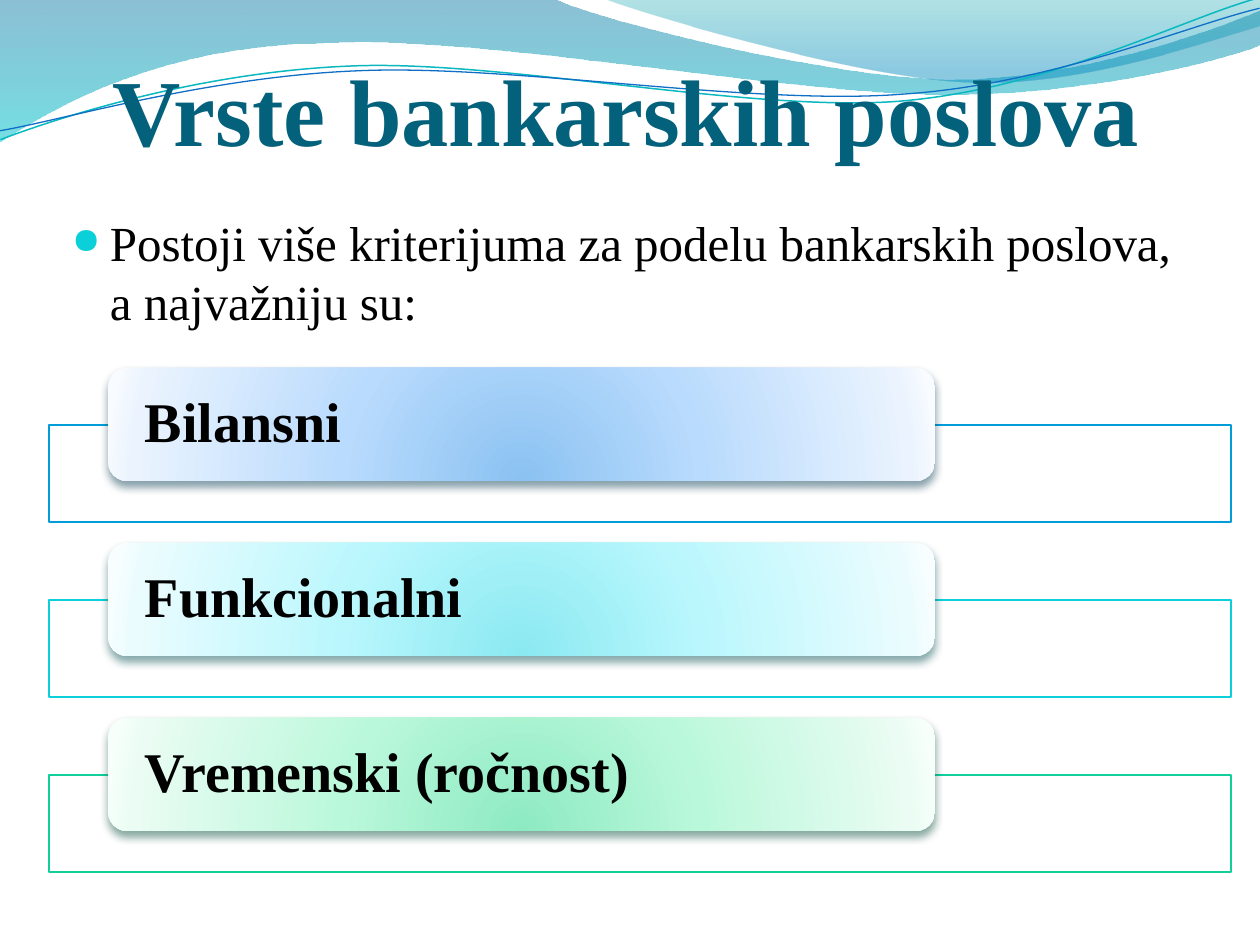
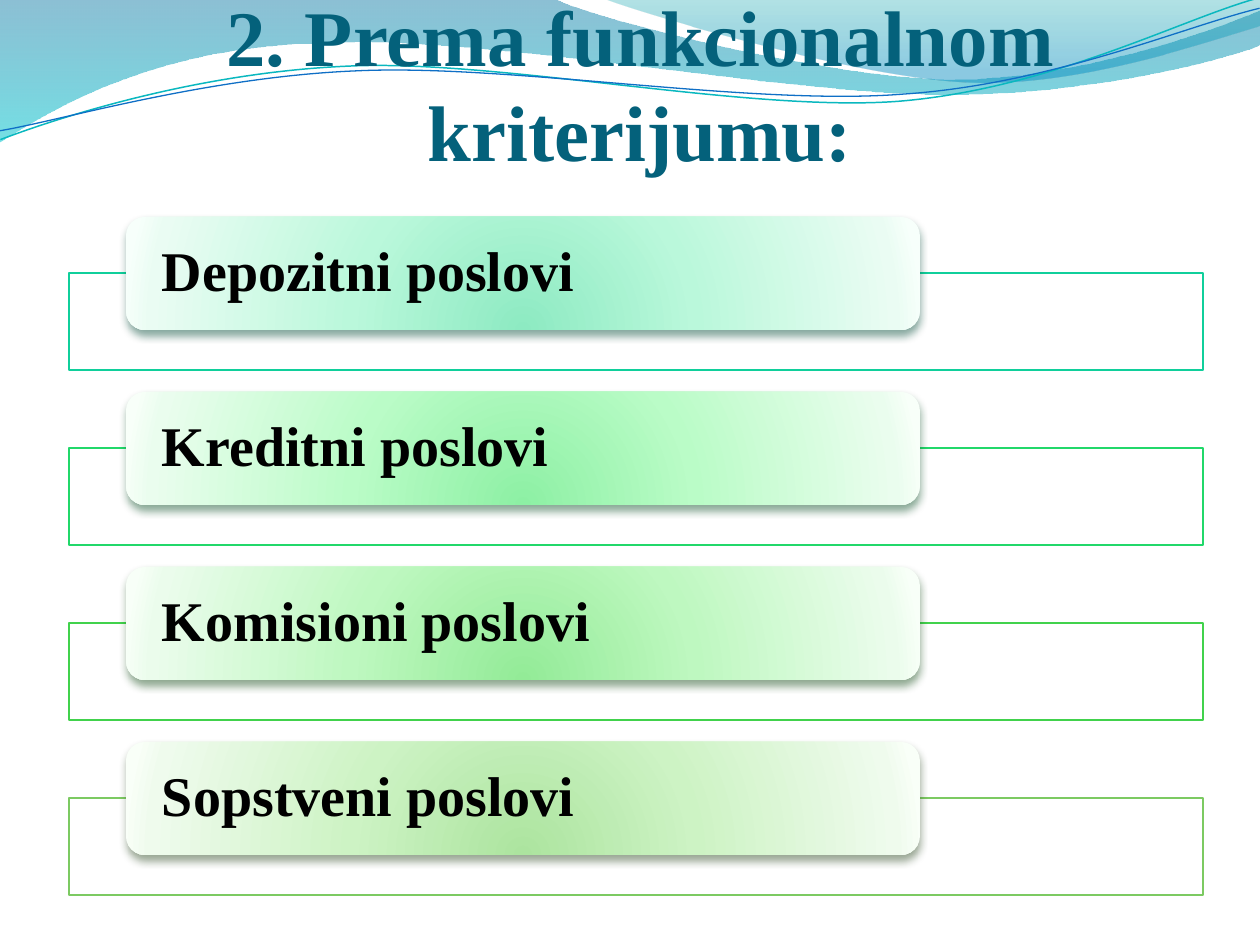
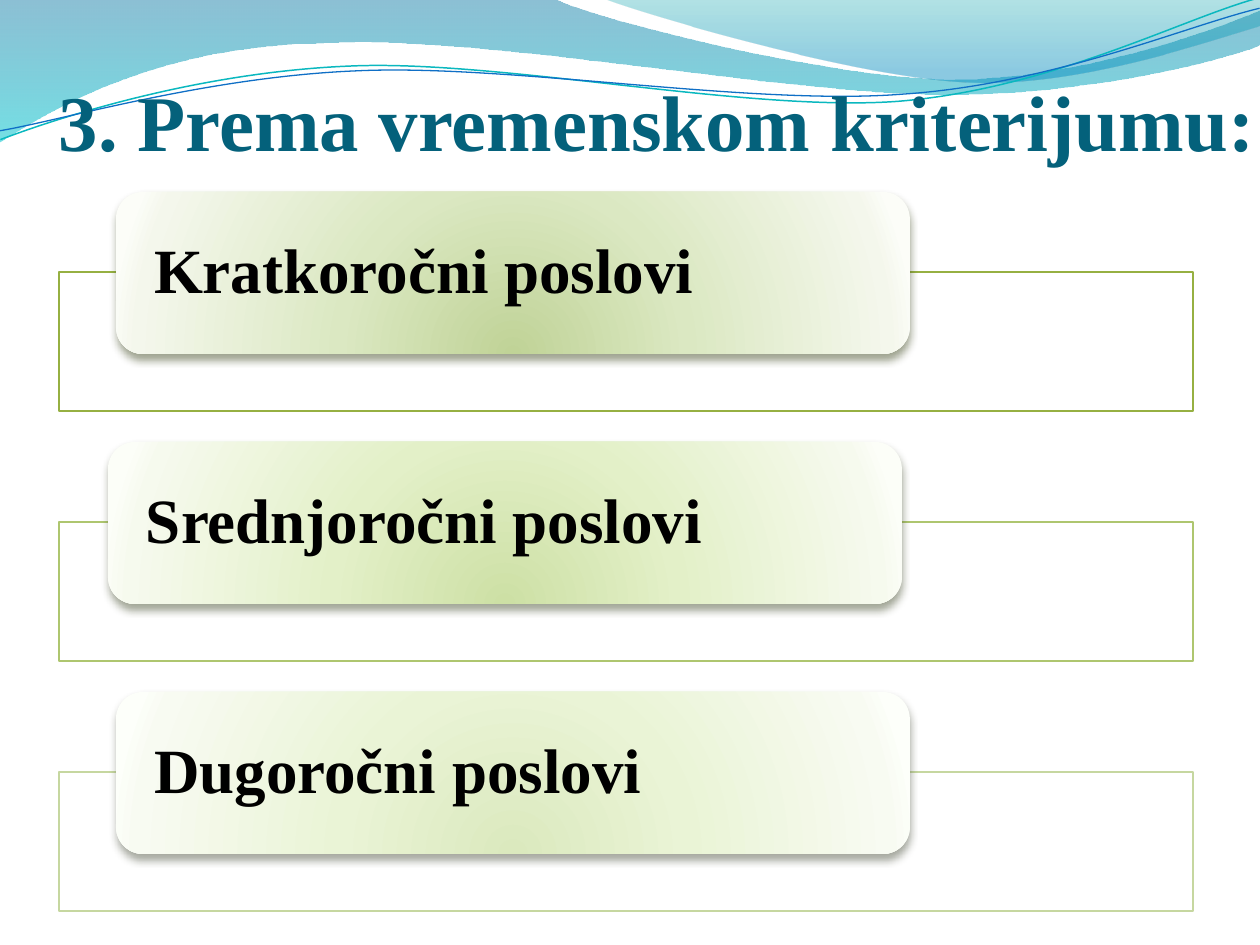
import pptx
import pptx.util
import pptx.dml.color
import pptx.enum.shapes
import pptx.enum.text
import pptx.oxml
import pptx.oxml.ns
from lxml import etree

RGB = pptx.dml.color.RGBColor
ALIGN = pptx.enum.text.PP_ALIGN
ANCHOR = pptx.enum.text.MSO_ANCHOR
SHAPE = pptx.enum.shapes.MSO_SHAPE
Pt = pptx.util.Pt
qn = pptx.oxml.ns.qn

SCALE = 914400 / 126  # EMU in one px
FONT = "Times New Roman"
TILT = 357.3  # turn of the thin wave lines, degrees

# Shared colours
WHITE = RGB(0xFF, 0xFF, 0xFF)
BLACK = RGB(0, 0, 0)
TITLE = RGB(0x04, 0x61, 0x7B)
BULLET = RGB(0x0B, 0xD0, 0xD9)
TEAL = RGB(0x0A, 0xB8, 0xBF)
BLUE = RGB(0x0F, 0x6F, 0xC6)
DEEP = RGB(0x00, 0x74, 0xA1)
AQUA = RGB(0x00, 0xC6, 0xCF)
SEA = RGB(0x00, 0xA1, 0xA9)
SKY = RGB(0x00, 0x8B, 0xBF)


def tone(text):
    return [RGB.from_string(code) for code in text.split()]


# Card tones: frame line, four gradient stops, shadow
AZURE = tone("009DD9 8BC2F1 B9DBFD EAF3FE F8FBFF 00374C")
CYAN = tone("0BD0D9 8BE9F1 B9F7FD EAFCFE F8FEFF 024B4E")
MINT = tone("10CF9B 8DEAC2 BAF8DB EAFCF3 F7FFFB 044A37")
GREEN = tone("21D86A 8DF0A4 BAFCC7 EAFDEE F8FFF9 0A4D25")
GRASS = tone("41D24C 93EB97 BEF8C0 EBFCEC F8FFF8 154B19")
LEAF = tone("7CCA62 ACE49F CDF3C4 EFFBED F9FFF8 2B4821")
OLIVE = tone("96B042 C0D397 DBE8C2 F4F7EC FCFDF8 353F16")
LIME = tone("AEC66F CDE0A5 E3F0C8 F6FAEE FCFEF8 3D4626")
PALE = tone("C6D7A0 DBE9BE EAF4D6 F8FBF2 FDFFFA 464C38")

# Wave outlines in px: a start, then line (2) or curve (6) steps
BAND = [(0, 0), (554, -1), (600, 21, 837, 79, 955, 79),
        (1075, 79, 1207, 33, 1260, 11), (1261, 45),
        (1239, 55, 1096, 96, 940, 94), (784, 94, 481, 35, 324, 43),
        (163, 45, 58, 105, -1, 142)]
CREST = [(604, -1), (641, 14, 859, 78, 969, 82),
         (1079, 87, 1211, 40, 1260, 26), (1260, 0)]
UPPER = [(-2, 110), (59, 90, 200, 52, 350, 53),
         (499, 53, 745, 118, 896, 114), (1049, 109, 1184, 45, 1260, 28)]
LOWER = [(-2, 101), (58, 94, 207, 57, 357, 58),
         (509, 58, 750, 112, 902, 107), (1052, 104, 1188, 52, 1262, 38)]


def px(num):
    return pptx.util.Emu(round(num * SCALE))


# XML helpers
def node(root, tag, **attrs):
    return etree.SubElement(root, qn(tag), {k: str(v) for k, v in attrs.items()})


def tint(root, color, alpha=100):
    item = node(root, "a:srgbClr", val=color)
    if alpha < 100:
        node(item, "a:alpha", val=alpha * 1000)


def blend(shape, stops, round_fill=False):
    shape.fill.gradient()
    grad = shape._element.spPr.find(qn("a:gradFill"))
    grad.clear()
    grad.set("rotWithShape", "1")
    group = node(grad, "a:gsLst")
    for place, color, alpha in stops:
        tint(node(group, "a:gs", pos=place * 1000), color, alpha)
    if round_fill:
        way = node(grad, "a:path", path="circle")
        node(way, "a:fillToRect", l=50000, t=130000, r=50000, b=-30000)
    else:
        node(grad, "a:lin", ang=5400000, scaled=0)


def shade(shape, color):
    group = shape._element.spPr.find(qn("a:effectLst"))
    drop = node(group, "a:outerShdw", blurRad=Pt(4.5), dist=Pt(3),
                dir=5400000, rotWithShape=0)
    tint(drop, color, 48)


# Waves at the top of each slide
def bend(shape, steps):
    """Join each three lines of a curve step into one cubic curve."""
    lines = iter(list(shape._element.iter(qn("a:lnTo"))))
    for step in steps[1:]:
        first = next(lines)
        if len(step) == 6:
            first.tag = qn("a:cubicBezTo")
            for line in (next(lines), next(lines)):
                first.append(line[0])
                line.getparent().remove(line)


def wave(slide, steps, close):
    points = [(px(x), px(y)) for step in steps
              for x, y in zip(step[::2], step[1::2])]
    pen = slide.shapes.build_freeform(*points[0])
    pen.add_line_segments(points[1:], close=close)
    shape = pen.convert_to_shape()
    shape.shadow.inherit = False
    bend(shape, steps)
    return shape


def waves(slide):
    for steps, stops in ((BAND, [(0, DEEP, 45), (100, AQUA, 55)]),
                         (CREST, [(0, SEA, 30), (80, SKY, 45)])):
        shape = wave(slide, steps, True)
        shape.line.fill.background()
        blend(shape, stops)
    for steps, color, width in ((UPPER, TEAL, 0.85), (LOWER, BLUE, 0.75)):
        shape = wave(slide, steps, False)
        shape.rotation = TILT
        shape.fill.background()
        shape.line.color.rgb = color
        shape.line.width = Pt(width)


# Text
def write(slide, text, box, size, color, bold, insets, anchor, align=ALIGN.LEFT):
    frame = slide.shapes.add_textbox(*map(px, box)).text_frame
    frame.word_wrap = True
    frame.vertical_anchor = anchor
    (frame.margin_left, frame.margin_top,
     frame.margin_right, frame.margin_bottom) = map(px, insets)
    frame.text = text
    para = frame.paragraphs[0]
    para.alignment = align
    font = para.runs[0].font
    font.name, font.size, font.bold = FONT, Pt(size), bold
    font.color.rgb = color
    return para


def title(slide, text, box, size, align=ALIGN.CENTER):
    write(slide, text, box, size, TITLE, True, (0, 6, 0, 0), ANCHOR.BOTTOM, align)


def point(slide, text, box):
    para = write(slide, text, box, 28, BLACK, False, (13, 6, 13, 6), ANCHOR.TOP)
    para.space_before = Pt(4)
    props = para._p.get_or_add_pPr()
    props.set("marL", str(px(38)))
    props.set("indent", str(px(-38)))
    tint(node(props, "a:buClr"), BULLET)
    node(props, "a:buSzPct", val=74000)
    node(props, "a:buChar", char="●")


# Framed cards
def block(slide, kind, box):
    shape = slide.shapes.add_shape(kind, *map(px, box))
    shape.shadow.inherit = False
    return shape


def frame(slide, box, color):
    shape = block(slide, SHAPE.RECTANGLE, box)
    shape.fill.solid()
    shape.fill.fore_color.rgb = WHITE
    paint = shape._element.spPr.find(qn("a:solidFill"))
    node(paint[0], "a:alpha", val=90000)
    shape.line.color.rgb = color
    shape.line.width = Pt(0.75)


def card(slide, text, box, size, stops, dark):
    shape = block(slide, SHAPE.ROUNDED_RECTANGLE, box)
    shape.line.fill.background()
    blend(shape, [(p, c, 100) for p, c in zip((0, 43, 93, 100), stops)], True)
    shade(shape, dark)
    # The label keeps clear of the round corners
    left, top, width, height = box
    pad = round(height * 0.05)
    inner = (left + pad, top + pad, width - 2 * pad, height - 2 * pad)
    side = round(width * 0.0378)
    para = write(slide, text, inner, size, BLACK, True, (side, 0, side, 0),
                 ANCHOR.MIDDLE)
    para.line_spacing = 0.9


def cards(slide, box, tall, rise, step, size, items):
    """Stack frames from box; each card starts 5% in and takes 70% of the width."""
    left, top, width, height = box
    for i, (text, (edge, *stops, dark), nudge) in enumerate(items):
        y = top + i * step
        frame(slide, (left, y, width, height), edge)
        place = (left + round(width * 0.05) + nudge, y - rise,
                 round(width * 0.7), tall)
        card(slide, text, place, size, stops, dark)


def main():
    deck = pptx.Presentation()
    deck.slide_width, deck.slide_height = px(1260), px(945)
    slides = [deck.slides.add_slide(deck.slide_layouts[6]) for _ in range(3)]
    for slide in slides:
        waves(slide)
    kinds, roles, terms = slides

    # Kinds of banking business
    title(kinds, "Vrste bankarskih poslova", (59, 59, 1134, 106), 54)
    point(kinds, "Postoji više kriterijuma za podelu bankarskih poslova, "
          "a najvažniju su:", (59, 207, 1134, 605))
    cards(kinds, (49, 425, 1182, 97), 113, 57, 175, 32,
          [("Bilansni", AZURE, 0), ("Funkcionalni", CYAN, 0),
           ("Vremenski (ročnost)", MINT, 0)])

    # By function
    title(roles, "2. Prema funkcionalnom kriterijumu:", (20, 20, 1240, 157), 45)
    cards(roles, (69, 273, 1134, 97), 113, 56, 175, 32,
          [("Depozitni poslovi", MINT, 0), ("Kreditni poslovi", GREEN, 0),
           ("Komisioni poslovi", GRASS, 0), ("Sopstveni poslovi", LEAF, 0)])

    # By term
    title(terms, "3. Prema vremenskom kriterijumu:", (59, 49, 1201, 118), 45,
          ALIGN.LEFT)
    cards(terms, (59, 272, 1134, 139), 162, 80, 250, 36,
          [("Kratkoročni poslovi", OLIVE, 0), ("Srednjoročni poslovi", LIME, -8),
           ("Dugoročni poslovi", PALE, 0)])

    deck.save("out.pptx")


if __name__ == "__main__":
    main()
